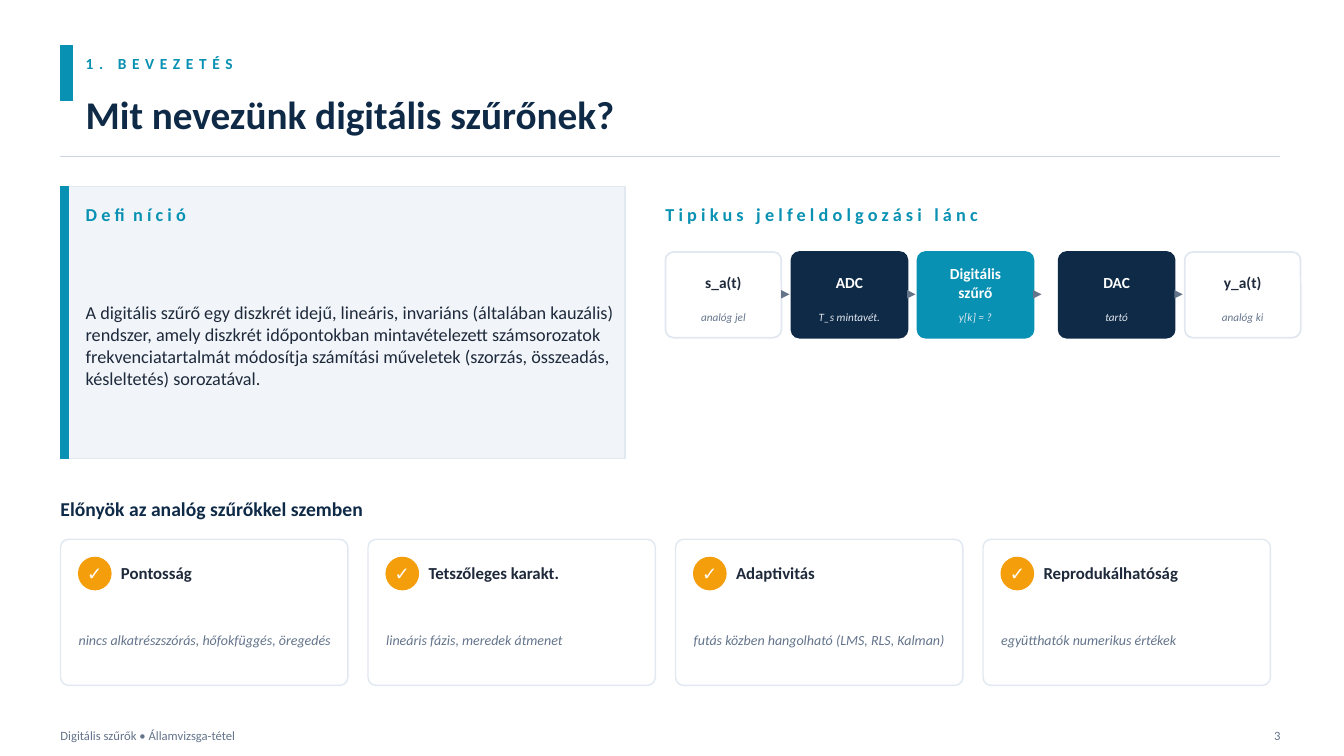
from lxml import etree
from pptx import Presentation
from pptx.dml.color import RGBColor
from pptx.enum import shapes, text
from pptx.oxml import ns
from pptx.util import Inches, Pt

TEAL = RGBColor(0x08, 0x91, 0xB2)
NAVY = RGBColor(0x0F, 0x2A, 0x47)
INK = RGBColor(0x1E, 0x29, 0x3B)
SLATE = RGBColor(0x64, 0x74, 0x8B)
RULE = RGBColor(0xCB, 0xD5, 0xE1)
BORDER = RGBColor(0xE2, 0xE8, 0xF0)
PALE = RGBColor(0xF1, 0xF5, 0xF9)
AMBER = RGBColor(0xF5, 0x9E, 0x0B)
WHITE = RGBColor(0xFF, 0xFF, 0xFF)

RECT = shapes.MSO_SHAPE.RECTANGLE
ROUNDED = shapes.MSO_SHAPE.ROUNDED_RECTANGLE
OVAL = shapes.MSO_SHAPE.OVAL
LEFT, CENTER, RIGHT = text.PP_ALIGN.LEFT, text.PP_ALIGN.CENTER, text.PP_ALIGN.RIGHT

deck = Presentation()
deck.slide_width, deck.slide_height = Inches(13.33), Inches(7.5)
slide = deck.slides.add_slide(deck.slide_layouts[6])


def add_panel(kind, box, fill, line, width=1, radius=None):
    panel = slide.shapes.add_shape(kind, *map(Inches, box))
    panel.shadow.inherit = False
    panel.fill.solid()
    panel.fill.fore_color.rgb = fill
    panel.line.color.rgb = line
    panel.line.width = Pt(width)
    if radius:
        panel.adjustments[0] = radius / min(box[2:])
    return panel


def write(place, words, size, color, bold=False, italic=False, align=LEFT, spacing=0):
    """Put words into a shape, or into a new text box if place is a (left, top, width, height)."""
    if isinstance(place, tuple):
        place = slide.shapes.add_textbox(*map(Inches, place))
    frame = place.text_frame
    frame.word_wrap = True
    frame.vertical_anchor = text.MSO_ANCHOR.MIDDLE
    frame.margin_left = frame.margin_top = frame.margin_right = frame.margin_bottom = 0
    frame.text = words
    for paragraph in frame.paragraphs:
        paragraph.alignment = align
        for run in paragraph.runs:
            font = run.font
            font.name, font.size, font.bold, font.italic = "Calibri", Pt(size), bold, italic
            font.color.rgb = color
            if spacing:
                run._r.get_or_add_rPr().set("spc", str(spacing * 100))


# Heading
add_panel(RECT, (0.6, 0.45, 0.12, 0.55), TEAL, TEAL)
write((0.85, 0.45, 8, 0.35), "1. BEVEZETÉS", 11, TEAL, bold=True, spacing=4)
write((0.85, 0.78, 12, 0.7), "Mit nevezünk digitális szűrőnek?", 28, NAVY, bold=True)

# Definition
add_panel(RECT, (0.6, 1.85, 5.6, 2.7), PALE, BORDER)
add_panel(RECT, (0.6, 1.85, 0.08, 2.7), TEAL, TEAL)
write((0.85, 1.95, 5.3, 0.35), "Definíció", 13, TEAL, bold=True, spacing=3)
write((0.85, 2.4, 5.3, 2.05),
      "A digitális szűrő egy diszkrét idejű, lineáris, invariáns (általában kauzális) rendszer, "
      "amely diszkrét időpontokban mintavételezett számsorozatok frekvenciatartalmát módosítja "
      "számítási műveletek (szorzás, összeadás, késleltetés) sorozatával.", 13, INK)

# Signal chain
write((6.6, 1.95, 6.2, 0.35), "Tipikus jelfeldolgozási lánc", 13, TEAL, bold=True, spacing=3)
stage_width = 1.15
stages = [
    (6.6, "s_a(t)", "analóg jel", WHITE),
    (7.85, "ADC", "T_s mintavét.", NAVY),
    (9.1, "Digitális\nszűrő", "y[k] = ?", TEAL),
    (10.5, "DAC", "tartó", NAVY),
    (11.75, "y_a(t)", "analóg ki", WHITE),
]
for left, stage, detail, fill in stages:
    analog = fill == WHITE
    add_panel(ROUNDED, (left, 2.5, stage_width, 0.85), fill, BORDER if analog else fill,
              width=1.25, radius=0.08)
    write((left, 2.58, stage_width, 0.45), stage, 11, INK if analog else WHITE,
          bold=True, align=CENTER)
    write((left, 3, stage_width, 0.3), detail, 8, SLATE if analog else BORDER,
          italic=True, align=CENTER)

# Heading rule and the short arrows between stages
arrows = [(left + stage_width + 0.02, 2.92, left + stage_width + 0.08, SLATE, 1.5, True)
          for left, *_ in stages[:-1]]
for start, y, end, color, width, arrowhead in [(0.6, 1.55, 12.7, RULE, 0.75, False), *arrows]:
    stroke = slide.shapes.add_connector(shapes.MSO_CONNECTOR.STRAIGHT,
                                        Inches(start), Inches(y), Inches(end), Inches(y))
    stroke.line.color.rgb = color
    stroke.line.width = Pt(width)
    if arrowhead:
        etree.SubElement(stroke.line._get_or_add_ln(), ns.qn("a:tailEnd"), type="triangle")
    etree.SubElement(stroke._element.spPr, ns.qn("a:effectLst"))

# Advantages
write((0.6, 4.85, 12.1, 0.4), "Előnyök az analóg szűrőkkel szemben", 14, NAVY, bold=True)
advantages = [
    ("Pontosság", "nincs alkatrészszórás, hőfokfüggés, öregedés"),
    ("Tetszőleges karakt.", "lineáris fázis, meredek átmenet"),
    ("Adaptivitás", "futás közben hangolható (LMS, RLS, Kalman)"),
    ("Reprodukálhatóság", "együtthatók numerikus értékek"),
]
for column, (advantage, reason) in enumerate(advantages):
    left = 0.6 + 3.05 * column
    add_panel(ROUNDED, (left, 5.35, 2.85, 1.45), WHITE, BORDER, radius=0.08)
    badge = add_panel(OVAL, (left + 0.18, 5.53, 0.32, 0.32), AMBER, AMBER)
    write(badge, "✓", 13, WHITE, bold=True, align=CENTER)
    write((left + 0.6, 5.5, 2.15, 0.36), advantage, 12, INK, bold=True)
    write((left + 0.18, 6, 2.55, 0.7), reason, 10, SLATE, italic=True)

# Footer
write((0.6, 7.15, 8, 0.3), "Digitális szűrők • Államvizsga-tétel", 9, SLATE)
write((12.4, 7.15, 0.3, 0.3), "3", 9, SLATE, align=RIGHT)

deck.save("out.pptx")
